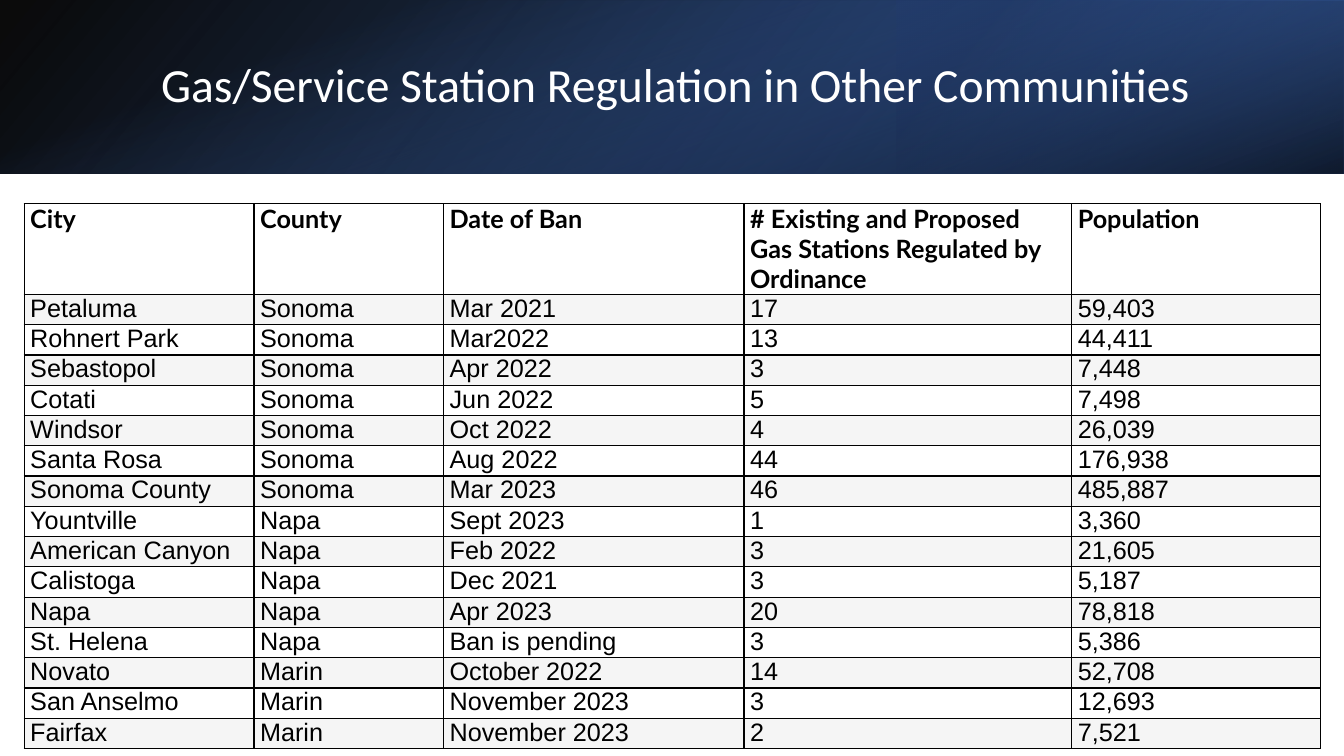
"""Build a slide with a table of gas station regulation by community."""
from lxml import etree
from pptx import Presentation, util as u
from pptx.dml.color import RGBColor
from pptx.enum import shapes, text
from pptx.oxml.ns import qn


def rgb(value):
    return RGBColor.from_string(value)


prs = Presentation()
prs.slide_width, prs.slide_height = u.Inches(13.33), u.Inches(7.5)
s = prs.slides.add_slide(prs.slide_layouts[6])

bands = [
    ((0, 0, 13.33, 1.72), 0, True, 140, [(0, "000000", 96), (100, "2F5597", 100)]),
    ((8.89, 0, 4.44, 1.72), 180, True, 320, [(19, "203864", 68), (100, "4472C4", 79)]),
    ((5.8, -5.8, 1.72, 13.33), 90, False, 340, [(23, "4472C4", 0), (99, "000000", 74)]),
]
for box, rotation, flipped, angle, stops in bands:
    sp = s.shapes.add_shape(shapes.MSO_SHAPE.RECTANGLE, *map(u.Inches, box))
    sp.shadow.inherit = False
    sp.rotation = rotation
    if flipped:
        sp._element.spPr.find(qn("a:xfrm")).set("flipH", "1")
    sp.line.fill.background()
    sp.fill.gradient()
    sp.fill.gradient_angle = 360 - angle
    for stop, (position, color, alpha) in zip(sp.fill.gradient_stops, stops):
        stop.position = position / 100
        stop.color.rgb = rgb(color)
    for clr, (position, color, alpha) in zip(sp._element.iter(qn("a:srgbClr")), stops):
        etree.SubElement(clr, qn("a:alpha")).set("val", str(alpha * 1000))

title = s.shapes.add_textbox(*map(u.Inches, (1.5, 0.38, 10.98, 0.96)))
tf = title.text_frame
tf.word_wrap = True
tf.vertical_anchor = text.MSO_ANCHOR.MIDDLE
p = tf.paragraphs[0]
p.text = "Gas/Service Station Regulation in Other Communities"
p.line_spacing = 0.9
p.font.name, p.font.size = "Calibri", u.Pt(34)
p.font.color.rgb = rgb("FFFFFF")

rows = [
    ("City", "County", "Date of Ban",
     "# Existing and Proposed Gas Stations Regulated by Ordinance", "Population"),
    ("Petaluma", "Sonoma", "Mar 2021", "17", "59,403"),
    ("Rohnert Park", "Sonoma", "Mar2022", "13", "44,411"),
    ("Sebastopol", "Sonoma", "Apr 2022", "3", "7,448"),
    ("Cotati", "Sonoma", "Jun 2022", "5", "7,498"),
    ("Windsor", "Sonoma", "Oct 2022", "4", "26,039"),
    ("Santa Rosa", "Sonoma", "Aug 2022", "44", "176,938"),
    ("Sonoma County", "Sonoma", "Mar 2023", "46", "485,887"),
    ("Yountville", "Napa", "Sept 2023", "1", "3,360"),
    ("American Canyon", "Napa", "Feb 2022", "3", "21,605"),
    ("Calistoga", "Napa", "Dec 2021", "3", "5,187"),
    ("Napa", "Napa", "Apr 2023", "20", "78,818"),
    ("St. Helena", "Napa", "Ban is pending", "3", "5,386"),
    ("Novato", "Marin", "October 2022", "14", "52,708"),
    ("San Anselmo", "Marin", "November 2023", "3", "12,693"),
    ("Fairfax", "Marin", "November 2023", "2", "7,521"),
]
widths = [2.28, 1.88, 2.98, 3.25, 2.47]
table = s.shapes.add_table(len(rows), len(widths), u.Inches(0.24), u.Inches(2.02),
                           u.Inches(sum(widths)), u.Inches(5.1)).table
for column, width in zip(table.columns, widths):
    column.width = u.Inches(width)
for i, values in enumerate(rows):
    header = i == 0
    table.rows[i].height = u.Inches(0.9 if header else 0.28)
    for j, value in enumerate(values):
        cell = table.cell(i, j)
        cell.margin_left = cell.margin_right = u.Inches(0.06)
        cell.margin_top = cell.margin_bottom = 0
        tcPr = cell._tc.get_or_add_tcPr()
        for side in ("lnL", "lnR", "lnT", "lnB"):
            ln = etree.SubElement(tcPr, qn("a:" + side), w=str(u.Pt(1)))
            fill = etree.SubElement(ln, qn("a:solidFill"))
            etree.SubElement(fill, qn("a:srgbClr"), val="000000")
        cell.fill.solid()
        cell.fill.fore_color.rgb = rgb("F5F5F5" if i % 2 else "FFFFFF")
        p = cell.text_frame.paragraphs[0]
        p.text = value
        p.font.name, p.font.size = "Lato" if header else "Arial", u.Pt(18)
        p.font.bold = header
        p.font.color.rgb = rgb("000000")

prs.save("out.pptx")
